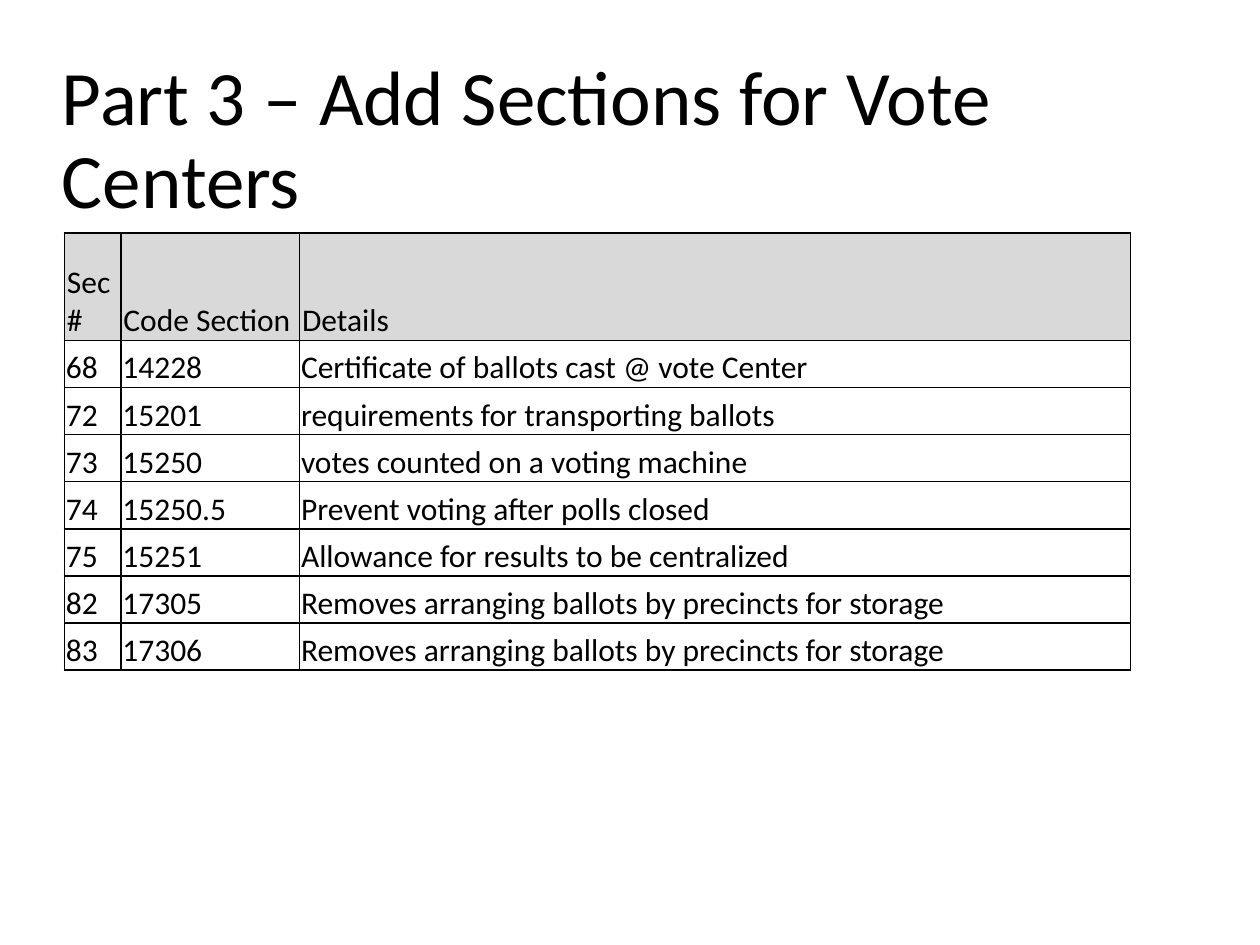
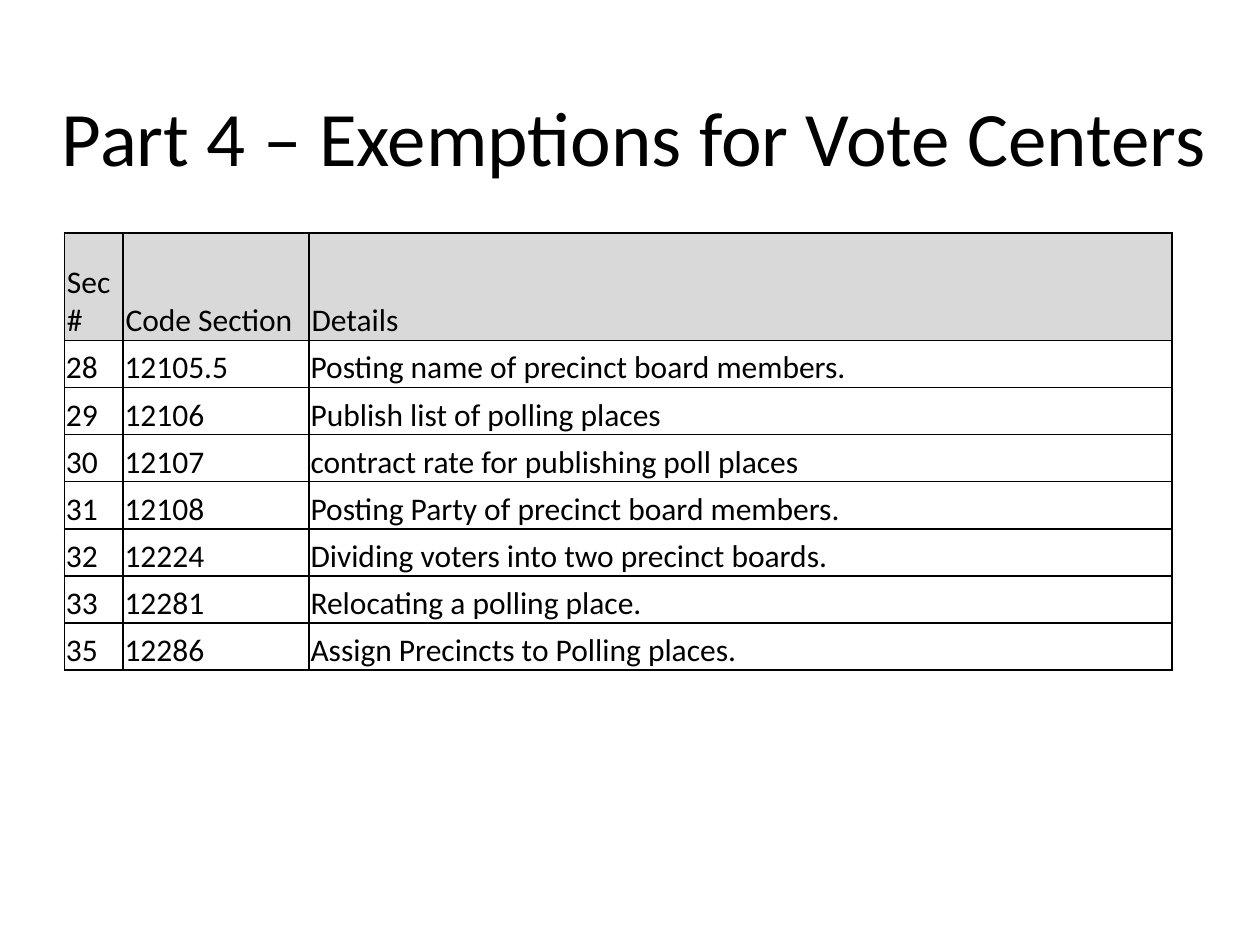
"""Builds two slides that list the code sections for vote centers."""
from collections import namedtuple

from lxml.etree import SubElement as add_node
from pptx import Presentation
from pptx.dml.color import RGBColor as Rgb
from pptx.enum.text import MSO_ANCHOR as Anchor
from pptx.oxml.ns import qn
from pptx.util import Cm, Pt

Box = namedtuple("Box", "left top width height")

COLOURS = {"text": "000000", "border": "000000", "header": "D9D9D9", "page": "FFFFFF"}
TITLE_FONT = {"name": "Calibri", "size": Pt(44)}
TABLE_FONT = {"name": "Calibri", "size": Pt(18)}
TITLE_BOX = Box(Cm(1), Cm(1.02), Cm(24.26), Cm(3.68))
TABLE_LEFT, TABLE_TOP = Cm(1.3), Cm(4.7)
HEADER_HEIGHT, ROW_HEIGHT = Cm(2.16), Cm(0.95)
HEADER_INSET, BODY_INSET = Cm(0.05), Cm(0.03)
HEADINGS = ("Sec#", "Code Section", "Details")

SECTION_SLIDES = [
    {
        "title": "Part 3 – Add Sections for Vote Centers",
        "widths": (Cm(1.14), Cm(3.6), Cm(16.75)),
        "rows": [
            ("68", "14228", "Certificate of ballots cast @ vote Center"),
            ("72", "15201", "requirements for transporting ballots"),
            ("73", "15250", "votes counted on a voting machine"),
            ("74", "15250.5", "Prevent voting after polls closed"),
            ("75", "15251", "Allowance for results to be centralized"),
            ("82", "17305", "Removes arranging ballots by precincts for storage"),
            ("83", "17306", "Removes arranging ballots by precincts for storage"),
        ],
    },
    {
        "title": "Part 4 – Exemptions for Vote Centers",
        "widths": (Cm(1.18), Cm(3.75), Cm(17.4)),
        "rows": [
            ("28", "12105.5", "Posting name of precinct board members."),
            ("29", "12106", "Publish list of polling places"),
            ("30", "12107", "contract rate for publishing poll places"),
            ("31", "12108", "Posting Party of precinct board members."),
            ("32", "12224", "Dividing voters into two precinct boards."),
            ("33", "12281", "Relocating a polling place."),
            ("35", "12286", "Assign Precincts to Polling places."),
        ],
    },
]


def set_values(target, values):
    for name, value in values.items():
        setattr(target, name, value)


def write_text(para, text, font_values):
    span = para.add_run()
    span.text = text
    set_values(span.font, font_values)
    span.font.color.rgb = Rgb.from_string(COLOURS["text"])


def paint(fill, colour):
    fill.solid()
    fill.fore_color.rgb = Rgb.from_string(COLOURS[colour])


def add_borders(cell):
    properties = cell._tc.get_or_add_tcPr()
    for position, side in enumerate(("a:lnL", "a:lnR", "a:lnT", "a:lnB")):
        line = add_node(properties, qn(side), w=str(Pt(1)))
        solid = add_node(line, qn("a:solidFill"))
        add_node(solid, qn("a:srgbClr"), val=COLOURS["border"])
        properties.insert(position, line)


def add_title(page, box, text):
    frame = page.shapes.add_textbox(*box).text_frame
    set_values(frame, {"word_wrap": True, "vertical_anchor": Anchor.MIDDLE})
    para = frame.paragraphs[0]
    para.line_spacing = 0.9
    write_text(para, text, TITLE_FONT)


def fill_cell(cell, text, is_header):
    inset = HEADER_INSET if is_header else BODY_INSET
    set_values(cell, {
        "margin_left": inset, "margin_right": inset, "margin_top": inset,
        "margin_bottom": 0, "vertical_anchor": Anchor.BOTTOM,
    })
    if is_header:
        paint(cell.fill, "header")
    else:
        cell.fill.background()
    write_text(cell.text_frame.paragraphs[0], text, TABLE_FONT)
    add_borders(cell)


def add_section_table(page, box, widths, rows):
    records = [HEADINGS, *rows]
    table = page.shapes.add_table(len(records), len(widths), *box).table
    set_values(table, {"first_row": False, "horz_banding": False})
    for column, width in zip(table.columns, widths):
        column.width = width
    for index, record in enumerate(records):
        table.rows[index].height = ROW_HEIGHT if index else HEADER_HEIGHT
        for place, text in enumerate(record):
            fill_cell(table.cell(index, place), text, index == 0)


def add_section_slide(deck, title, widths, rows):
    page = deck.slides.add_slide(deck.slide_layouts[6])
    paint(page.background.fill, "page")
    add_title(page, TITLE_BOX, title)
    height = HEADER_HEIGHT + ROW_HEIGHT * len(rows)
    box = Box(TABLE_LEFT, TABLE_TOP, sum(widths), height)
    add_section_table(page, box, widths, rows)


def main():
    deck = Presentation()
    set_values(deck, {"slide_width": Cm(25.4), "slide_height": Cm(19.05)})
    for content in SECTION_SLIDES:
        add_section_slide(deck, **content)
    deck.save("out.pptx")


if __name__ == "__main__":
    main()
